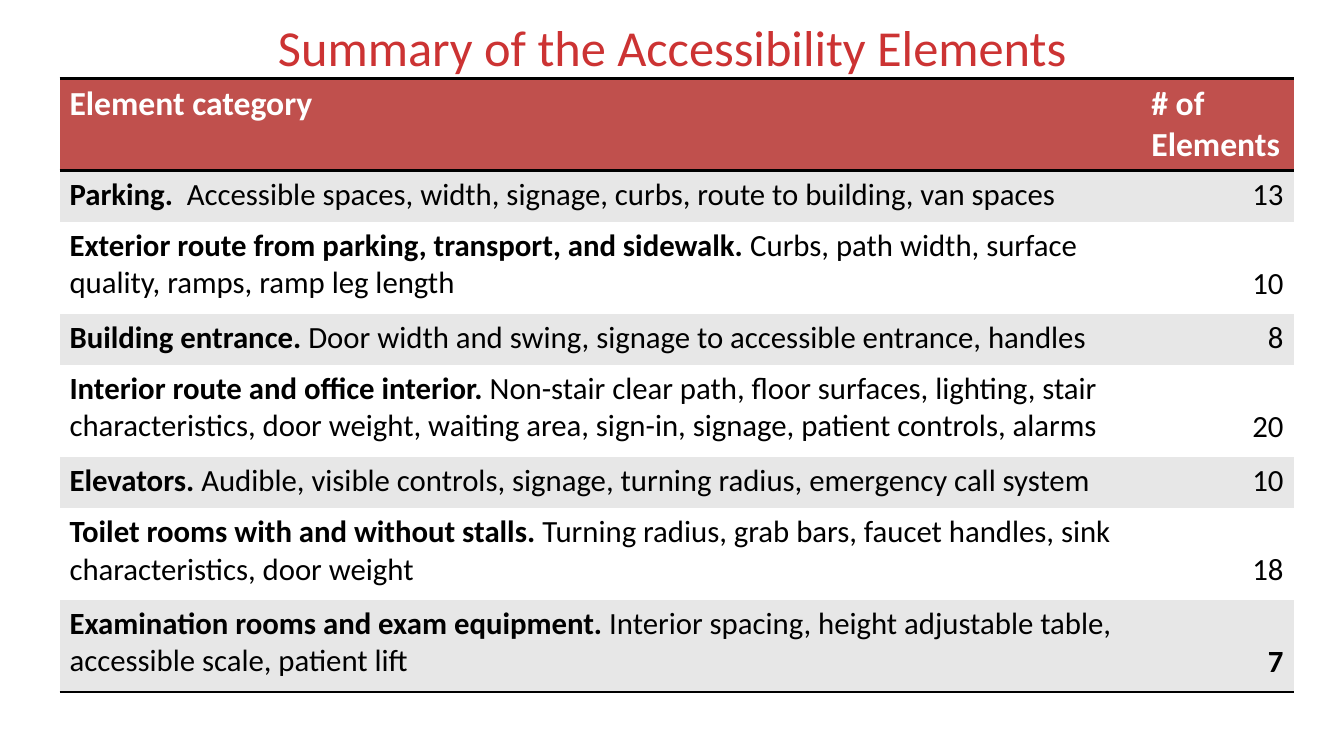
from lxml.etree import SubElement
from pptx import Presentation
from pptx.dml.color import RGBColor
from pptx.enum.text import MSO_ANCHOR as Anchor, PP_ALIGN as Align
from pptx.oxml import parse_xml
from pptx.oxml.ns import nsdecls, qn
from pptx.util import Inches, Pt

RED = RGBColor(0xCC, 0x33, 0x33)
BRICK = RGBColor(0xC0, 0x50, 0x4D)
BAND = RGBColor(0xE7, 0xE7, 0xE7)
WHITE = RGBColor(0xFF, 0xFF, 0xFF)
BLACK = RGBColor(0, 0, 0)

NO_GRID_STYLE = "{2D5ABB26-0587-4C30-8999-92F81FD0307C}"
COLUMN_WIDTHS = (10.73, 1.51)
ONE_LINE, TWO_LINES = 0.51, 0.91

# Category, description, number of elements, row height
CATEGORIES = [
    ("Parking.  ", "Accessible spaces, width, signage, curbs, route to building, van spaces",
     13, ONE_LINE),
    ("Exterior route from parking, transport, and sidewalk. ",
     "Curbs, path width, surface quality, ramps, ramp leg length", 10, TWO_LINES),
    ("Building entrance. ", "Door width and swing, signage to accessible entrance, handles",
     8, ONE_LINE),
    ("Interior route and office interior.",
     " Non-stair clear path, floor surfaces, lighting, stair characteristics, door weight, "
     "waiting area, sign-in, signage, patient controls, alarms", 20, TWO_LINES),
    ("Elevators.", " Audible, visible controls, signage, turning radius, emergency call system",
     10, ONE_LINE),
    ("Toilet rooms with and without stalls.",
     " Turning radius, grab bars, faucet handles, sink characteristics, door weight",
     18, TWO_LINES),
    ("Examination rooms and exam equipment.",
     " Interior spacing, height adjustable table, accessible scale, patient lift",
     7, TWO_LINES),
]


class SlideBuilder:
    font_name = "Calibri"
    header_size = 24
    body_size = 22

    def __init__(self, page):
        self.page = page

    def style(self, span, size, color, bold=False):
        span.font.name = self.font_name
        span.font.size = Pt(size)
        span.font.bold = bold
        span.font.color.rgb = color

    def title(self, text, left, top, width, height):
        box = self.page.shapes.title
        box.left, box.top = Inches(left), Inches(top)
        box.width, box.height = Inches(width), Inches(height)
        box.text_frame.text = text
        box.text_frame.vertical_anchor = Anchor.MIDDLE
        para = box.text_frame.paragraphs[0]
        para.alignment = Align.CENTER
        self.style(para.runs[0], 36, RED)

    def table(self, left, top, column_widths, row_heights):
        frame = self.page.shapes.add_table(
            len(row_heights), len(column_widths), Inches(left), Inches(top),
            Inches(sum(column_widths)), Inches(sum(row_heights)))
        table = frame.table
        table.horz_banding = False
        table._tbl.tblPr.find(qn("a:tableStyleId")).text = NO_GRID_STYLE
        for column, width in zip(table.columns, column_widths):
            column.width = Inches(width)
        for row, height in zip(table.rows, row_heights):
            row.height = Inches(height)
        return table

    def cell(self, cell, parts, size, color, fill, align=Align.LEFT):
        """Fill a cell with (text, bold) parts."""
        cell.fill.solid()
        cell.fill.fore_color.rgb = fill
        para = cell.text_frame.paragraphs[0]
        para.alignment = align
        for text, bold in parts:
            span = para.add_run()
            span.text = text
            self.style(span, size, color, bold)

    def rule(self, cell, side):
        """Draw a black border on side T or B of a cell."""
        line = parse_xml(f'<a:ln{side} {nsdecls("a")} w="{Pt(2)}"/>')
        solid = SubElement(line, qn("a:solidFill"))
        SubElement(solid, qn("a:srgbClr"), val=str(BLACK))
        cell._tc.get_or_add_tcPr().insert(0, line)

    def summary_table(self):
        heights = [TWO_LINES] + [height for *_, height in CATEGORIES]
        table = self.table(0.59, 0.78, COLUMN_WIDTHS, heights)

        for column, heading in enumerate(("Element category", "# of Elements")):
            self.cell(table.cell(0, column), [(heading, True)],
                      self.header_size, WHITE, BRICK)
            for side in "BT":
                self.rule(table.cell(0, column), side)

        last = len(CATEGORIES)
        for row, (category, description, count, height) in enumerate(CATEGORIES, 1):
            fill = BAND if row % 2 else WHITE
            self.cell(table.cell(row, 0), [(category, True), (description, False)],
                      self.body_size, BLACK, fill)
            number = table.cell(row, 1)
            self.cell(number, [(str(count), row == last)],
                      self.body_size, BLACK, fill, Align.RIGHT)
            if height == TWO_LINES:
                number.vertical_anchor = Anchor.BOTTOM
                number.margin_bottom = Inches(0.11)

        for column in range(len(COLUMN_WIDTHS)):
            self.rule(table.cell(last, column), "B")


def main():
    deck = Presentation()
    deck.slide_width, deck.slide_height = Inches(13.33), Inches(7.5)
    title_only = deck.slide_layouts[5]
    builder = SlideBuilder(deck.slides.add_slide(title_only))
    builder.title("Summary of the Accessibility Elements", 0.67, 0.13, 12, 0.66)
    builder.summary_table()
    deck.save("out.pptx")


if __name__ == "__main__":
    main()
